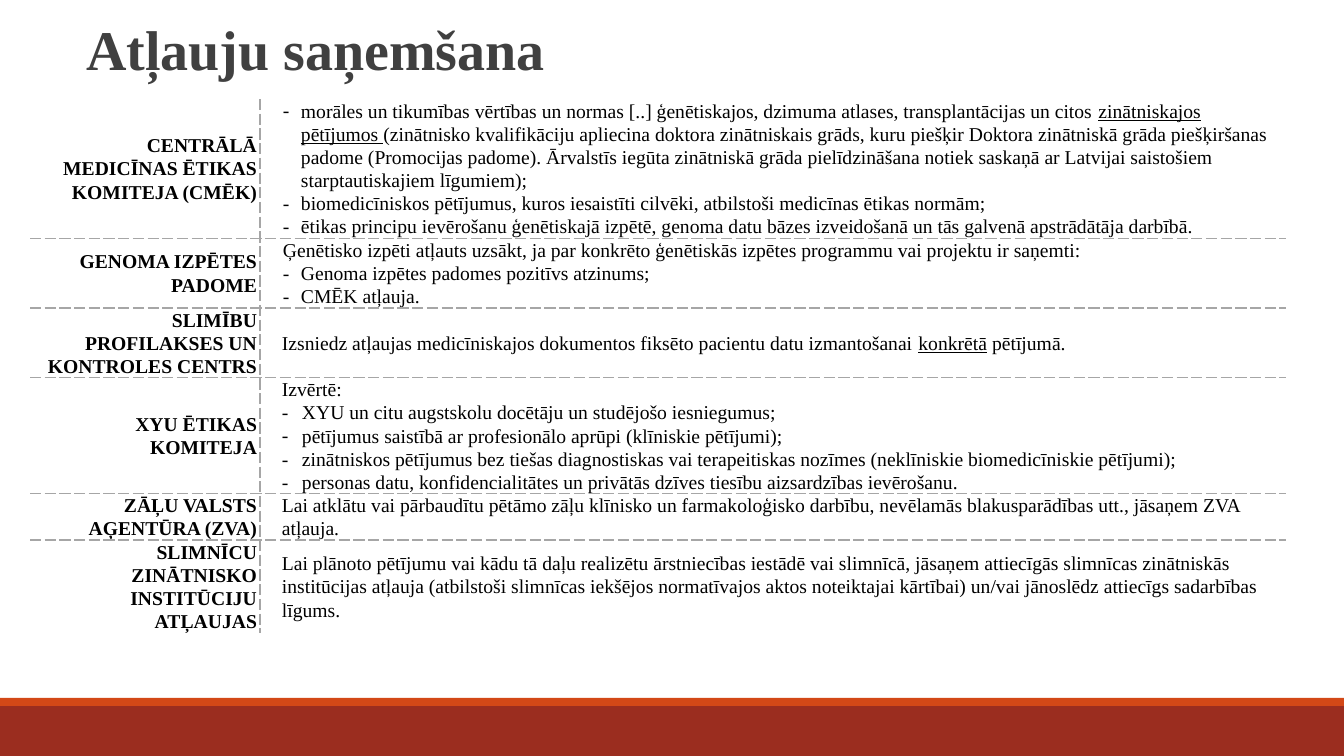
from lxml.etree import SubElement
from pptx import Presentation
from pptx.dml.color import RGBColor
from pptx.enum.shapes import MSO_SHAPE
from pptx.enum.text import MSO_ANCHOR as ANCHOR, PP_ALIGN as ALIGN
from pptx.oxml.ns import qn
from pptx.util import Pt

PX = 914400 / 100.8
FONT = "Times New Roman"
BLACK = RGBColor(0x00, 0x00, 0x00)
TITLE_GREY = RGBColor(0x40, 0x40, 0x40)
RULE_GREY = RGBColor(0xA6, 0xA6, 0xA6)
DARK_RED = RGBColor(0x9B, 0x2D, 0x1F)
ORANGE = RGBColor(0xD3, 0x48, 0x17)

ROWS = [
    (139, "CENTRĀLĀ MEDICĪNAS ĒTIKAS KOMITEJA (CMĒK)", 38, -18, [
        "- morāles un tikumības vērtības un normas [..] ģenētiskajos, dzimuma atlases, "
        "transplantācijas un citos _zinātniskajos pētījumos _(zinātnisko kvalifikāciju "
        "apliecina doktora zinātniskais grāds, kuru piešķir Doktora zinātniskā grāda "
        "piešķiršanas padome (Promocijas padome). Ārvalstīs iegūta zinātniskā grāda "
        "pielīdzināšana notiek saskaņā ar Latvijai saistošiem starptautiskajiem līgumiem);",
        "- biomedicīniskos pētījumus, kuros iesaistīti cilvēki, atbilstoši medicīnas ētikas normām;",
        "- ētikas principu ievērošanu ģenētiskajā izpētē, genoma datu bāzes izveidošanā "
        "un tās galvenā apstrādātāja darbībā."]),
    (70, "GENOMA IZPĒTES PADOME", 38, -18, [
        "Ģenētisko izpēti atļauts uzsākt, ja par konkrēto ģenētiskās izpētes programmu "
        "vai projektu ir saņemti:",
        "- Genoma izpētes padomes pozitīvs atzinums;",
        "- CMĒK atļauja."]),
    (69, "SLIMĪBU PROFILAKSES UN KONTROLES CENTRS", 19, 0, [
        "Izsniedz atļaujas medicīniskajos dokumentos fiksēto pacientu datu izmantošanai "
        "_konkrētā_ pētījumā."]),
    (116, "XYU ĒTIKAS KOMITEJA", 39, -20, [
        "Izvērtē:",
        "- XYU un citu augstskolu docētāju un studējošo iesniegumus;",
        "- pētījumus saistībā ar profesionālo aprūpi (klīniskie pētījumi);",
        "- zinātniskos pētījumus bez tiešas diagnostiskas vai terapeitiskas nozīmes "
        "(neklīniskie biomedicīniskie pētījumi);",
        "- personas datu, konfidencialitātes un privātās dzīves tiesību aizsardzības ievērošanu."]),
    (46, "ZĀĻU VALSTS AĢENTŪRA (ZVA)", 19, 0, [
        "Lai atklātu vai pārbaudītu pētāmo zāļu klīnisko un farmakoloģisko darbību, "
        "nevēlamās blakusparādības utt., jāsaņem ZVA atļauja."]),
    (93, "SLIMNĪCU ZINĀTNISKO INSTITŪCIJU ATĻAUJAS", 19, 0, [
        "Lai plānoto pētījumu vai kādu tā daļu realizētu ārstniecības iestādē vai slimnīcā, "
        "jāsaņem attiecīgās slimnīcas zinātniskās institūcijas atļauja (atbilstoši slimnīcas "
        "iekšējos normatīvajos aktos noteiktajai kārtībai) un/vai jānoslēdz attiecīgs "
        "sadarbības līgums."]),
]


def px(*lengths):
    return [round(n * PX) for n in lengths]


def style_run(r, size, color, bold):
    r.font.name, r.font.size, r.font.bold = FONT, Pt(size), bold
    r.font.color.rgb = color


prs = Presentation()
prs.slide_width, prs.slide_height = px(1344, 756)
slide = prs.slides.add_slide(prs.slide_layouts[5])

for top, height, color in [(706, 50, DARK_RED), (698, 8, ORANGE)]:
    sp = slide.shapes.add_shape(MSO_SHAPE.RECTANGLE, *px(0, top, 1344, height))
    sp.shadow.inherit = False
    sp.fill.solid()
    sp.fill.fore_color.rgb = color
    sp.line.fill.background()

title = slide.shapes.title
title.left, title.top, title.width, title.height = px(76, 9, 976, 78)
tf = title.text_frame
tf.text = "Atļauju saņemšana"
tf.vertical_anchor = ANCHOR.BOTTOM
p = tf.paragraphs[0]
p.alignment = ALIGN.LEFT
style_run(p.runs[0], 40, TITLE_GREY, True)

total = sum(row[0] for row in ROWS)
table = slide.shapes.add_table(len(ROWS), 2, *px(30, 99, 1256, total)).table
table.first_row = table.horz_banding = False
table.columns[0].width, table.columns[1].width = px(230, 1026)

for i, (height, body, left, indent, lines) in enumerate(ROWS):
    table.rows[i].height = px(height)[0]
    for j, texts in enumerate([[body], lines]):
        cell = table.cell(i, j)
        cell.vertical_anchor = ANCHOR.MIDDLE
        cell.margin_left, cell.margin_right, cell.margin_top, cell.margin_bottom = px(3, 3, 0, 0)
        tcPr = cell._tc.get_or_add_tcPr()
        inner = {"L": j == 1, "R": j == 0, "T": i > 0, "B": i < len(ROWS) - 1}
        for side, ruled in inner.items():
            ln = SubElement(tcPr, qn(f"a:ln{side}"), w=str(Pt(1)))
            if ruled:
                fill = SubElement(ln, qn("a:solidFill"))
                SubElement(fill, qn("a:srgbClr"), val=str(RULE_GREY))
                SubElement(ln, qn("a:prstDash"), val="sysDash")
            else:
                SubElement(ln, qn("a:noFill"))
        cell.fill.background()

        tf = cell.text_frame
        for n, text in enumerate(texts):
            p = tf.add_paragraph() if n else tf.paragraphs[0]
            p.line_spacing = 1.07
            if j == 0:
                p.alignment = ALIGN.RIGHT
            else:
                pPr = p._p.get_or_add_pPr()
                margin, hang = px(left, indent)
                pPr.set("marL", str(margin))
                pPr.set("indent", str(hang))
                if text.startswith("- "):
                    SubElement(pPr, qn("a:buFont"), typeface=FONT)
                    SubElement(pPr, qn("a:buChar"), char="-")
            for k, part in enumerate(text.removeprefix("- ").split("_")):
                r = p.add_run()
                r.text = part
                style_run(r, 14, BLACK, j == 0)
                r.font.underline = k == 1

prs.save("out.pptx")
